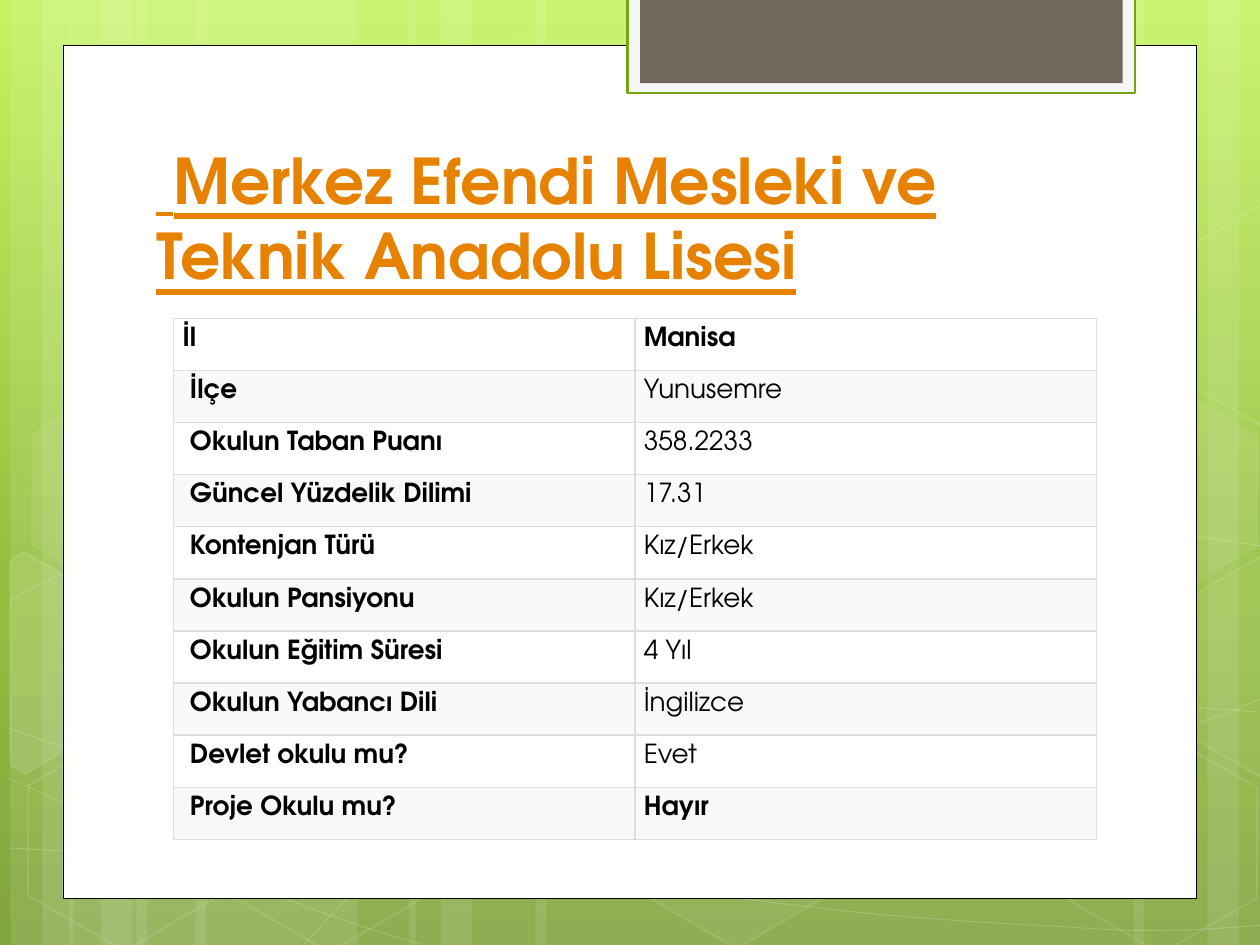
from math import cos, radians, sin

from lxml import etree
from pptx import Presentation
from pptx.dml.color import RGBColor
from pptx.enum.shapes import MSO_SHAPE
from pptx.enum.text import MSO_ANCHOR
from pptx.oxml.ns import qn
from pptx.util import Inches, Pt

RECT, HEX = MSO_SHAPE.RECTANGLE, MSO_SHAPE.HEXAGON
FONT = "TeX Gyre Adventor"
WHITE = "FFFFFF"
COLS, ROWS = 10, 7.5  # slide grid of one-inch squares
TILT = 30

SKY = [(0, "C3F35F"), (62, "93BF3F"), (100, "81A53E")]
# Each band has a wide, a thin and a middle stripe: (left, width), twelfths
BANDS = [
    [(13, 21), (1, 6), (4, 10)],
    [(18.6, 21), (6.6, 6), (9.6, 10)],
    [(88, 21), (115, 6), (108, 10)],
    [(51, 37), (39, 6), (42, 10)],
]
# Start point, then three points for each Bezier piece
CURVES = [
    [(.07, 6.73), (.61, 6.76), (1.15, 6.79), (1.9, 6.78), (2.65, 6.77),
     (3.58, 6.75), (4.58, 6.65), (5.58, 6.55), (7, 6.36), (7.92, 6.17),
     (8.83, 5.98), (9.77, 5.68), (10.07, 5.51)],
    [(.07, 4.77), (.36, 4.61), (.65, 4.46), (1.21, 4.31), (1.78, 4.16),
     (2.59, 3.94), (3.47, 3.87), (4.36, 3.8), (5.44, 3.79), (6.54, 3.87),
     (7.64, 3.95), (9.47, 4.26), (10.07, 4.34)],
    [(.06, 6.17), (1.27, 6.72), (2.47, 7.27), (3.34, 7.49)],
    [(.07, 5.78), (.38, 5.89), (.7, 6), (1.28, 6.16), (1.86, 6.31),
     (2.73, 6.56), (3.57, 6.73), (4.4, 6.9), (5.45, 7.08), (6.28, 7.18),
     (7.11, 7.29), (8, 7.33), (8.53, 7.36), (9.05, 7.4), (9.19, 7.38),
     (9.45, 7.38), (9.71, 7.37), (9.89, 7.35), (10.07, 7.34)],
    [(2.42, 7.49), (2.6, 7.29), (2.78, 7.09), (3.02, 6.91), (3.26, 6.73),
     (3.6, 6.53), (3.88, 6.39), (4.16, 6.25), (4.33, 6.19), (4.7, 6.09),
     (5.06, 5.99), (5.73, 5.85), (6.08, 5.78), (6.44, 5.71), (6.49, 5.71),
     (6.8, 5.69), (7.11, 5.66), (7.6, 5.63), (7.94, 5.62), (8.29, 5.61),
     (8.86, 5.62), (8.86, 5.62), (9.08, 5.62), (9.31, 5.62), (9.53, 5.62),
     (9.71, 5.63), (9.88, 5.64), (9.97, 5.65), (10.06, 5.66),
     (10.03, 5.65), (10.06, 5.66)][:-3],
]
# Left, top, fill and line opacity in percent
CELLS = [
    (3.34, .36, 4, 8), (4.97, 5.89, 6, 12), (.11, 5.91, 0, 12),
    (.14, 3.12, 7, 8), (1.74, 5.92, 0, 12), (7.53, 4.53, 10, 12),
    (8.34, 5.93, 0, 12), (8.34, 3.14, 7, 8),
]
# Hexagons cut by the slide edge: fill opacity, centre, corners as seen
RIGHT = [(9.26, 4.85), (10.01, 4.41), (10.09, 4.46), (10.09, 6.13),
         (10.02, 6.17), (9.26, 5.73)]
CUTS = [
    (10, (.36, 5.35), [(.08, 4.45), (.19, 4.38), (.96, 4.82), (.95, 5.7),
                       (.2, 6.14), (.08, 6.07)]),
    (4, (9.85, 5.2), RIGHT),
    (0, (9.85, 2.41), [(x, y - 2.79) for x, y in RIGHT]),
]
TITLE = "Merkez Efendi Mesleki ve Teknik Anadolu Lisesi"
FACTS = [
    ("İl", "Manisa"),
    (" İlçe", "Yunusemre"),
    (" Okulun Taban Puanı", "358.2233"),
    (" Güncel Yüzdelik Dilimi", "17.31"),
    (" Kontenjan Türü", "Kız/Erkek"),
    (" Okulun Pansiyonu", "Kız/Erkek"),
    (" Okulun Eğitim Süresi", "4 Yıl"),
    (" Okulun Yabancı Dili", "İngilizce"),
    (" Devlet okulu mu?", "Evet"),
    (" Proje Okulu mu?", "Hayır"),
]


def rgb(code):
    return RGBColor.from_string(code)


def tint(fill, code, root, path, alpha):
    """Solid colour, or none at zero opacity."""
    if not alpha:
        fill.background()
        return
    fill.solid()
    fill.fore_color.rgb = rgb(code)
    if alpha < 100:
        node = root.xpath(path + "/a:solidFill/a:srgbClr")[0]
        etree.SubElement(node, qn("a:alpha"), val=str(alpha * 1000))


def paint(shape, fill=WHITE, alpha=100, line=WHITE, width=1, edge=0):
    shape.shadow.inherit = False
    root = shape._element
    tint(shape.fill, fill, root, "./p:spPr", alpha)
    tint(shape.line.fill, line, root, "./p:spPr/a:ln", edge)
    if edge:
        shape.line.width = Pt(width)


def draw(slide, kind, box):
    return slide.shapes.add_shape(kind, *map(Inches, box))


def trace(slide, box, spots, close):
    dots = [(Inches(box[0] + x), Inches(box[1] + y)) for x, y in spots]
    pen = slide.shapes.build_freeform(*dots[0], scale=1.0)
    pen.add_line_segments(dots[1:], close=close)
    return pen.convert_to_shape()


def bend(shape):
    """Join every three straight steps into one Bezier piece."""
    steps = shape._element.xpath(".//a:lnTo")
    for i in range(0, len(steps), 3):
        curve = etree.Element(qn("a:cubicBezTo"))
        steps[i].addprevious(curve)
        for step in steps[i:i + 3]:
            curve.append(step[0])
            step.getparent().remove(step)
    return shape


def level(spots, mid):
    """Turn points back by the tilt around a centre."""
    c, s = cos(radians(TILT)), sin(radians(TILT))
    gaps = [(x - mid[0], y - mid[1]) for x, y in spots]
    return [(mid[0] + x * c + y * s, mid[1] + y * c - x * s) for x, y in gaps]


def add_sky(slide):
    fill = slide.background.fill
    fill.gradient()
    fill.gradient_angle = 270
    stops = slide.element.xpath(".//p:bgPr//a:gsLst")[0]
    stops.clear()
    for pos, code in SKY:
        stop = etree.SubElement(stops, qn("a:gs"), pos=str(pos * 1000))
        etree.SubElement(stop, qn("a:srgbClr"), val=code)


def add_scene(slide, box):
    left, top, _, high = box
    # Light stripes
    for band in BANDS:
        for x, wide in band:
            paint(draw(slide, RECT, (left + x / 12, top, wide / 12, high)), alpha=10)
    # Thin curves
    for knots in CURVES:
        paint(bend(trace(slide, box, knots, False)), alpha=0, width=.5, edge=20)
    # Whole and cut hexagons
    for x, y, alpha, edge in CELLS:
        cell = draw(slide, HEX, (left + x, top + y, 1.75, 1.52))
        cell.adjustments[0] = .285
        cell.rotation = TILT
        paint(cell, alpha=alpha, edge=edge)
    for alpha, mid, spots in CUTS:
        cut = trace(slide, box, level(spots, mid), True)
        cut.rotation = TILT
        paint(cut, alpha=alpha, edge=12)


def add_panel(slide, box):
    left, top, wide, _ = box
    paint(draw(slide, RECT, box), line="000000", width=.5, edge=100)
    # Tab hanging from the top edge
    x, y, w, h = left + wide - 4.52, top - .38, 4.03, .76
    paint(draw(slide, RECT, (x, y, w, h)), "F5F5F5", line="74A510", width=1.25, edge=100)
    paint(draw(slide, RECT, (x + .1, y, w - .2, h - .08)), "71685A")


def style(run, size, code, bold):
    font = run.font
    font.name, font.size, font.bold = FONT, Pt(size), bold
    font.color.rgb = rgb(code)


def add_title(slide, box):
    frame = slide.shapes.add_textbox(*map(Inches, box)).text_frame
    frame.word_wrap = True
    frame.vertical_anchor = MSO_ANCHOR.BOTTOM
    for text, bold in ((" ", False), (TITLE, True)):
        run = frame.paragraphs[0].add_run()
        run.text = text
        style(run, 36, "E68200", bold)
        run.font.underline = True


def rule(cell):
    """Thin grey border on all four sides."""
    props = cell._tc.get_or_add_tcPr()
    for i, side in enumerate("LRTB"):
        line = etree.Element(qn("a:ln" + side), w=str(Pt(.75)))
        fill = etree.SubElement(line, qn("a:solidFill"))
        etree.SubElement(fill, qn("a:srgbClr"), val="DDDDDD")
        props.insert(i, line)


def add_facts(slide, box):
    table = slide.shapes.add_table(len(FACTS), 2, *map(Inches, box)).table
    table.first_row = table.horz_banding = False
    for r, pair in enumerate(FACTS):
        for c, text in enumerate(pair):
            cell = table.cell(r, c)
            cell.margin_left = cell.margin_right = Inches(.07)
            cell.margin_top = cell.margin_bottom = Inches(.07)
            tint(cell.fill, "F9F9F9", None, "", 100 * (r % 2))
            cell.text_frame.text = text
            bold = c == 0 or r in (0, len(FACTS) - 1)
            style(cell.text_frame.paragraphs[0].runs[0], 15, "000000", bold)
            rule(cell)


def main():
    deck = Presentation()
    deck.slide_width, deck.slide_height = Inches(COLS), Inches(ROWS)
    slide = deck.slides.add_slide(deck.slide_layouts[6])
    add_sky(slide)
    add_scene(slide, (0, 0, COLS, ROWS))
    add_panel(slide, (.5, .36, 9, 6.77))
    add_title(slide, (1.14, 1.12, 7.68, 1.25))
    add_facts(slide, (1.38, 2.53, 7.32, 4.13))
    deck.save("out.pptx")


if __name__ == "__main__":
    main()
